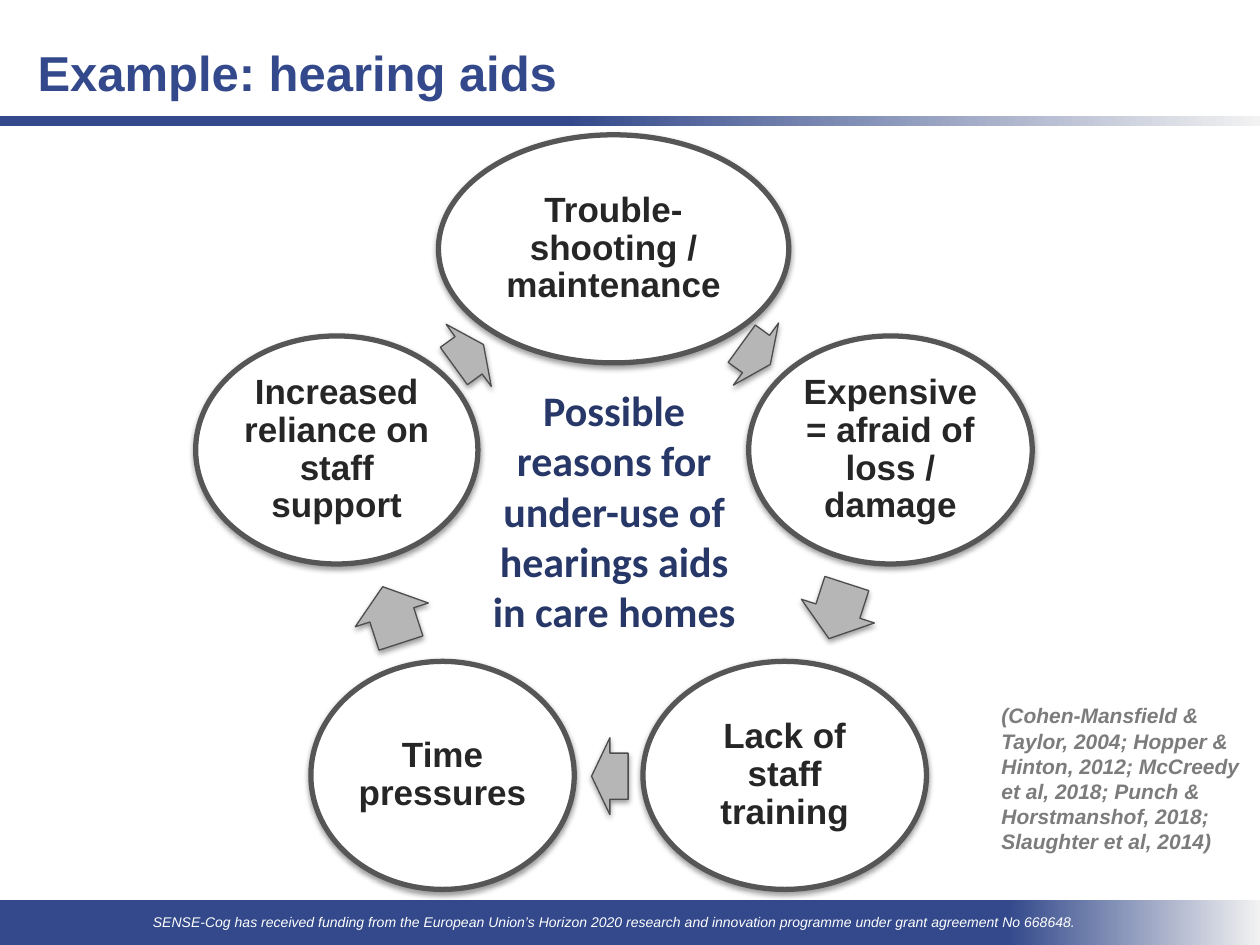
import math
from lxml import etree
from pptx import Presentation
from pptx import util as u
from pptx.dml.color import RGBColor
from pptx.enum import shapes, text
from pptx.oxml.ns import qn

PX = 9144
NAVY = "33498B"
REASONS = [
    ("Trouble-shooting / maintenance", 278),
    ("Expensive = afraid of loss / damage", 225),
    ("Lack of staff training", 225),
    ("Time pressures", 209),
    ("Increased reliance on staff support", 224),
]
ARROWS = [(600, 281, 28), (665, 485, 46), (484, 616, 29), (311, 488, 47), (372, 282, 29)]


def px(*lengths):
    return [round(length * PX) for length in lengths]


def colour(hex_code):
    return RGBColor.from_string(hex_code)


def write(frame, wording, size, hex_code, font="Arial", bold=False, italic=False,
          align=text.PP_ALIGN.LEFT, anchor=text.MSO_ANCHOR.TOP):
    frame.word_wrap = True
    frame.vertical_anchor = anchor
    frame.text = wording
    paragraph = frame.paragraphs[0]
    paragraph.alignment = align
    style = paragraph.runs[0].font
    style.name, style.size = font, u.Pt(size)
    style.bold, style.italic = bold, italic
    style.color.rgb = colour(hex_code)
    return paragraph


def add_label(slide, box, wording, size, hex_code, **style):
    label = slide.shapes.add_textbox(*px(*box))
    write(label.text_frame, wording, size, hex_code, **style)


def add_band(slide, box, fade_start):
    band = slide.shapes.add_shape(shapes.MSO_SHAPE.RECTANGLE, *px(*box))
    band.shadow.inherit = False
    band.line.fill.background()
    band.fill.gradient()
    band.fill.gradient_angle = 0
    stops = band.fill.gradient_stops
    for stop, position, shade in zip(stops, (fade_start, 1), (NAVY, "F2F2F2")):
        stop.position = position
        stop.color.rgb = colour(shade)


def add_raised(slide, kind, centre, size, fill, line, weight):
    (x, y), (width, height) = centre, size
    raised = slide.shapes.add_shape(kind, *px(x - width / 2, y - height / 2, width, height))
    raised.fill.solid()
    raised.fill.fore_color.rgb = colour(fill)
    raised.line.color.rgb = colour(line)
    raised.line.width = u.Pt(weight)
    raised.shadow.inherit = False
    effects = raised._element.spPr.find(qn("a:effectLst"))
    shadow = etree.SubElement(effects, qn("a:outerShdw"), blurRad="40000", dist="20000",
                              dir="5400000", rotWithShape="0")
    black = etree.SubElement(shadow, qn("a:srgbClr"), val="000000")
    etree.SubElement(black, qn("a:alpha"), val="38000")
    return raised


def add_reason(slide, centre, width, wording):
    oval = add_raised(slide, shapes.MSO_SHAPE.OVAL, centre, (width, 181), "FFFFFF", "565656", 3)
    frame = oval.text_frame
    frame.margin_left = frame.margin_right = frame.margin_top = frame.margin_bottom = u.Inches(0.03)
    paragraph = write(frame, wording, 20, "262626", bold=True,
                      align=text.PP_ALIGN.CENTER, anchor=text.MSO_ANCHOR.MIDDLE)
    paragraph.line_spacing = 0.9


def add_cycle(slide, box):
    left, top, width, height = box
    radius = 231
    middle_x, middle_y = left + width / 2, top + 181 / 2 + radius
    for step, ((wording, oval_width), (x, y, length)) in enumerate(zip(REASONS, ARROWS)):
        angle = math.radians(72 * step)
        centre = middle_x + radius * math.sin(angle), middle_y - radius * math.cos(angle)
        add_reason(slide, centre, oval_width, wording)
        arrow = add_raised(slide, shapes.MSO_SHAPE.RIGHT_ARROW, (x, y), (length, 61),
                           "B6B6B6", "4D4D4D", 0.75)
        arrow.adjustments[0], arrow.adjustments[1] = 0.6, 0.5
        arrow.rotation = 36 + 72 * step
    add_label(slide, (middle_x - 116, top + 193, 233, 212),
              "Possible reasons for under-use of hearings aids in care homes",
              24, "263768", font="Calibri", bold=True, align=text.PP_ALIGN.CENTER)


def add_header(slide, box):
    left, top, width, height = box
    add_band(slide, (left, top + height - 8, width, 8), 0.45)
    add_label(slide, (left + 20, top + 29, 472, 57), "Example: hearing aids", 28, NAVY, bold=True)


def add_footer(slide, box):
    left, top, width, height = box
    add_band(slide, box, 0.8)
    add_label(slide, (left + 59, top, 858, height),
              "SENSE-Cog has received funding from the European Union’s Horizon 2020 research "
              "and innovation programme under grant agreement No 668648.",
              8, "FFFFFF", italic=True, align=text.PP_ALIGN.CENTER, anchor=text.MSO_ANCHOR.MIDDLE)


def add_citation(slide, box):
    add_label(slide, box,
              "(Cohen-Mansfield & Taylor, 2004; Hopper & Hinton, 2012; McCreedy et al, 2018; "
              "Punch & Horstmanshof, 2018; Slaughter et al, 2014)",
              12, "7C7C7C", bold=True, italic=True)


def main():
    deck = Presentation()
    deck.slide_width, deck.slide_height = px(1000, 750)
    slide = deck.slides.add_slide(deck.slide_layouts[6])
    add_footer(slide, (0, 714, 1000, 36))
    add_header(slide, (0, 0, 1000, 100))
    add_citation(slide, (785, 553, 213, 174))
    add_cycle(slide, (156, 107, 662, 599))
    deck.save("out.pptx")


if __name__ == "__main__":
    main()
